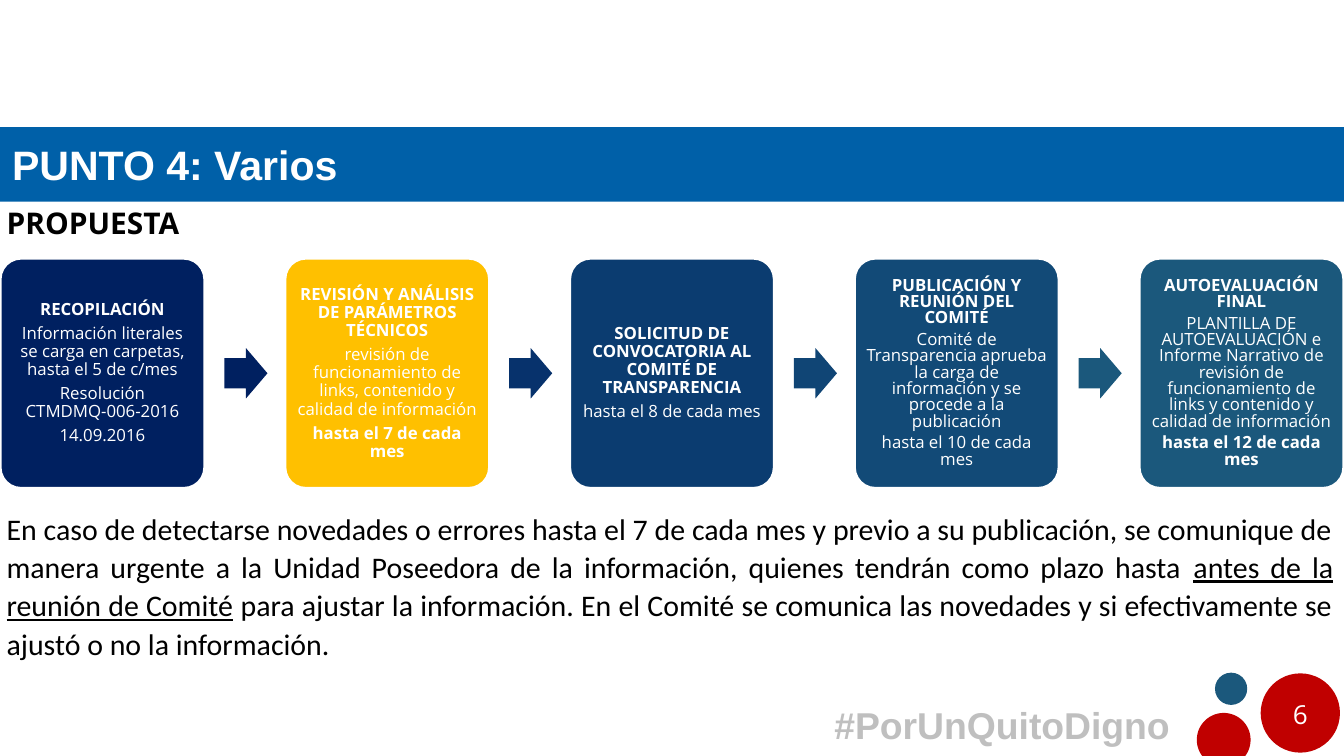
from math import asin, cos, pi, sin

from pptx import Presentation
from pptx.dml.color import RGBColor
from pptx.enum.shapes import MSO_SHAPE as Shape
from pptx.enum.text import MSO_ANCHOR as Anchor, MSO_AUTO_SIZE as AutoSize, PP_ALIGN as Align
from pptx.util import Inches, Pt

WHITE = RGBColor(0xFF, 0xFF, 0xFF)
BLACK = RGBColor(0, 0, 0)
GRAY = RGBColor(0xBF, 0xBF, 0xBF)
BLUE = RGBColor(0x00, 0x60, 0xA8)
RED = RGBColor(0xC0, 0, 0)
NAVY = RGBColor(0x00, 0x20, 0x60)
GOLD = RGBColor(0xFF, 0xC0, 0x00)
ROYAL = RGBColor(0x07, 0x32, 0x6C)
DENIM = RGBColor(0x0B, 0x3C, 0x70)
COBALT = RGBColor(0x10, 0x45, 0x75)
STEEL = RGBColor(0x12, 0x4A, 0x77)
TEAL = RGBColor(0x1B, 0x58, 0x7C)

TITLE = "PUNTO 4: Varios"
HEADING = "PROPUESTA"
HASHTAG = "#PorUnQuitoDigno"
PAGE = "6"

STEPS = [
    (NAVY, [("RECOPILACIÓN", True),
            ("Información literales se carga en carpetas, hasta el 5 de c/mes", False),
            ("Resolución CTMDMQ-006-2016", False),
            ("14.09.2016", False)]),
    (GOLD, [("REVISIÓN Y ANÁLISIS DE PARÁMETROS TÉCNICOS", True),
            ("revisión de funcionamiento de links, contenido y calidad de información", False),
            ("hasta el 7 de cada mes", True)]),
    (DENIM, [("SOLICITUD DE CONVOCATORIA AL COMITÉ DE TRANSPARENCIA", True),
             ("hasta el 8 de cada mes", False)]),
    (STEEL, [("PUBLICACIÓN Y REUNIÓN DEL COMITÉ", True),
             ("Comité de Transparencia aprueba la carga de información y se procede a la publicación", False),
             ("hasta el 10 de cada mes", False)]),
    (TEAL, [("AUTOEVALUACIÓN FINAL", True),
            ("PLANTILLA DE AUTOEVALUACIÓN e Informe Narrativo de revisión de "
             "funcionamiento de links y contenido y calidad de información", False),
            ("hasta el 12 de cada mes", True)]),
]
ARROWS = [NAVY, ROYAL, COBALT, TEAL]

NOTE = [
    ("En caso de detectarse novedades o errores hasta el 7 de cada mes y previo a su "
     "publicación, se comunique de manera urgente a la Unidad Poseedora de la información, "
     "quienes tendrán como plazo hasta ", False),
    ("antes de la reunión de Comité", True),
    (" para ajustar la información. En el Comité se comunica las novedades y si "
     "efectivamente se ajustó o no la información.", False),
]

CARD_LEFT, CARD_TOP, CARD_W, CARD_H = 0.01, 3.85, 3.03, 3.41
CARD_STEP = 4.2375
ARROW_OFFSET, ARROW_W, ARROW_H = 3.33, 0.64, 0.75

prs = Presentation()
prs.slide_width, prs.slide_height = Inches(20), Inches(11.25)
s = prs.slides.add_slide(prs.slide_layouts[6])


def paint(sp, fill, line=None):
    sp.shadow.inherit = False
    sp.fill.solid()
    sp.fill.fore_color.rgb = fill
    if line is None:
        sp.line.fill.background()
    else:
        sp.line.color.rgb = line
        sp.line.width = Pt(2)
    return sp


def add_block(kind, at, fill, line=None):
    return paint(s.shapes.add_shape(kind, *map(Inches, at)), fill, line)


def add_run(p, text, size, font, color, bold=False, underline=False):
    r = p.add_run()
    r.text = text
    r.font.size, r.font.name = Pt(size), font
    r.font.color.rgb = color
    r.font.bold, r.font.underline = bold, underline


def set_frame(tf, anchor=Anchor.TOP, inset=(0.1, 0.05), fit=AutoSize.NONE):
    tf.word_wrap = True
    tf.auto_size = fit
    tf.vertical_anchor = anchor
    tf.margin_left = tf.margin_right = Inches(inset[0])
    tf.margin_top = tf.margin_bottom = Inches(inset[1])


def add_text(text, at, size, font, color, bold=False, align=Align.LEFT, **frame):
    tf = s.shapes.add_textbox(*map(Inches, at)).text_frame
    set_frame(tf, **frame)
    p = tf.paragraphs[0]
    p.alignment = align
    for part, underline in [(text, False)] if isinstance(text, str) else text:
        add_run(p, part, size, font, color, bold, underline)
    return p


def add_card(left, fill, lines):
    sp = add_block(Shape.ROUNDED_RECTANGLE, (left, CARD_TOP, CARD_W, CARD_H), fill, WHITE)
    sp.adjustments[0] = 0.1
    tf = sp.text_frame
    set_frame(tf, Anchor.MIDDLE, (0.07, 0.07), AutoSize.TEXT_TO_FIT_SHAPE)
    for i, (text, bold) in enumerate(lines):
        p = tf.paragraphs[0] if i == 0 else tf.add_paragraph()
        p.alignment = Align.CENTER
        p.line_spacing, p.space_after = 0.9, Pt(6.3)
        add_run(p, text, 18, "Open Sans", WHITE, bold)


def add_cut_circle(cx, cy, radius, bottom, fill, count=72):
    cut = asin((bottom - cy) / radius)
    start, sweep = pi - cut, pi + 2 * cut
    angles = [start + sweep * i / count for i in range(count + 1)]
    points = [(Inches(cx + radius * cos(a)), Inches(cy + radius * sin(a))) for a in angles]
    fb = s.shapes.build_freeform(*points[0])
    fb.add_line_segments(points[1:], close=True)
    paint(fb.convert_to_shape(), fill)


add_block(Shape.OVAL, (18.08, 10.01, 0.48, 0.48), TEAL)
add_block(Shape.OVAL, (18.76, 10.02, 1.18, 1.18), RED)
add_cut_circle(18.21, 11.01, 0.4, 11.25, RED)
add_block(Shape.RECTANGLE, (0, 1.89, 20, 1.11), BLUE)

middle = dict(anchor=Anchor.MIDDLE, inset=(0.18, 0.09))
add_text(TITLE, (0, 1.89, 17.76, 1.11), 44, "Arial", WHITE, True, **middle)
add_text(PAGE, (18.76, 10.32, 1.18, 0.6), 28, "Open Sans", WHITE, align=Align.CENTER, **middle)
add_text(HASHTAG, (11.26, 10.48, 6.33, 0.6), 40, "Arial", GRAY, True, Align.RIGHT, **middle)

for i, (fill, lines) in enumerate(STEPS):
    add_card(CARD_LEFT + i * CARD_STEP, fill, lines)
for i, fill in enumerate(ARROWS):
    left = CARD_LEFT + i * CARD_STEP + ARROW_OFFSET
    top = CARD_TOP + (CARD_H - ARROW_H) / 2
    arrow = add_block(Shape.RIGHT_ARROW, (left, top, ARROW_W, ARROW_H), fill)
    arrow.adjustments[0] = 0.6

fit = dict(fit=AutoSize.SHAPE_TO_FIT_TEXT)
p = add_text(NOTE, (0, 7.51, 19.94, 2.41), 32, "Calibri", BLACK, align=Align.JUSTIFY, **fit)
p.line_spacing, p.space_after = 1.07, Pt(8)
add_text(HEADING, (0, 2.99, 5.58, 0.64), 32, "Open Sans", BLACK, True, **fit)

prs.save("out.pptx")
